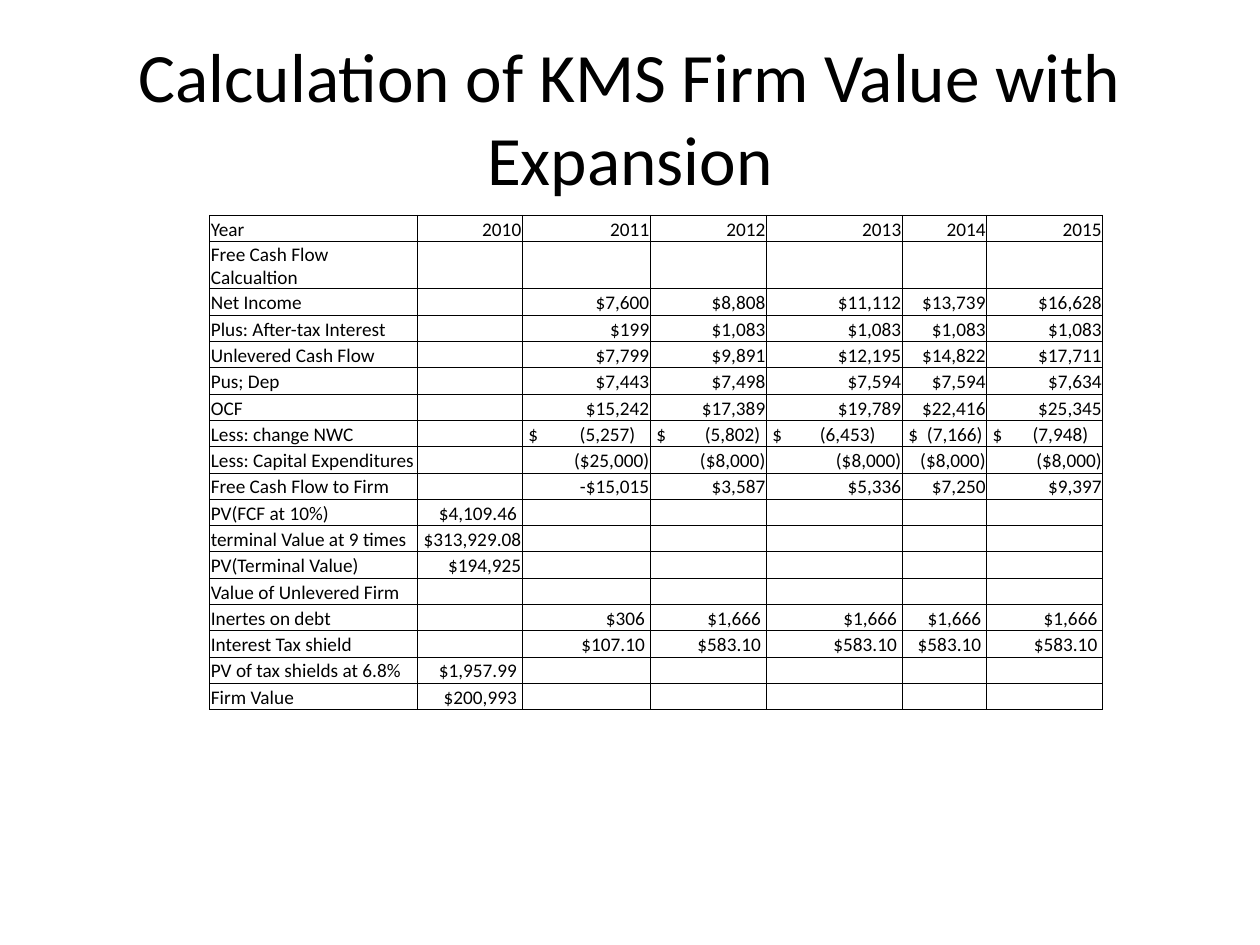
from lxml.etree import SubElement
from pptx import Presentation
from pptx.dml.color import RGBColor
from pptx.enum.text import MSO_ANCHOR, PP_ALIGN
from pptx.oxml.ns import qn
from pptx.util import Cm, Pt

COLORS = {"text": "000000", "border": "000000"}
FONT = "Calibri"
CELL_SIZE = 11
ROW_HEIGHT = 0.53
COLUMN_WIDTHS = [4.19, 2.11, 2.58, 2.34, 2.74, 1.7, 2.34]
AMOUNT_TABS = [2.16, 2.1, 2.08, 1.5, 1.93]

CASH_FLOWS = [
    ["Year", "2010", "2011", "2012", "2013", "2014", "2015"],
    ["Free Cash Flow Calcualtion"],
    ["Net Income", "", "$7,600", "$8,808", "$11,112", "$13,739", "$16,628"],
    ["Plus: After-tax Interest", "", "$199"] + ["$1,083"] * 4,
    ["Unlevered Cash Flow", "", "$7,799", "$9,891", "$12,195", "$14,822", "$17,711"],
    ["Pus; Dep", "", "$7,443", "$7,498", "$7,594", "$7,594", "$7,634"],
    ["OCF", "", "$15,242", "$17,389", "$19,789", "$22,416", "$25,345"],
    ["Less: change NWC", "", "$\t(5,257)", "$\t(5,802)", "$\t(6,453)", "$\t(7,166)", "$\t(7,948)"],
    ["Less: Capital Expenditures", "", "($25,000)"] + ["($8,000)"] * 4,
    ["Free Cash Flow to Firm", "", "-$15,015", "$3,587", "$5,336", "$7,250", "$9,397"],
    ["PV(FCF at 10%)", "$4,109.46 "],
    ["terminal Value at 9 times", "$313,929.08"],
    ["PV(Terminal Value)", "$194,925"],
    ["Value of Unlevered Firm"],
    ["Inertes on debt", "", "$306 "] + ["$1,666 "] * 4,
    ["Interest Tax shield", "", "$107.10 "] + ["$583.10 "] * 4,
    ["PV of tax shields at 6.8%", "$1,957.99 "],
    ["Firm Value", "$200,993 "],
]


def style_paragraph(paragraph, size, align):
    paragraph.alignment = align
    paragraph.font.size = Pt(size)
    paragraph.font.name = FONT
    paragraph.font.color.rgb = RGBColor.from_string(COLORS["text"])


def add_title(slide, left, top, width, height):
    title = slide.shapes.add_textbox(Cm(left), Cm(top), Cm(width), Cm(height)).text_frame
    title.word_wrap = True
    title.vertical_anchor = MSO_ANCHOR.MIDDLE
    title.text = "Calculation of KMS Firm Value with Expansion"
    style_paragraph(title.paragraphs[0], 39.6, PP_ALIGN.CENTER)


def add_borders(cell):
    properties = cell._tc.get_or_add_tcPr()
    for side in ("a:lnL", "a:lnR", "a:lnT", "a:lnB"):
        line = SubElement(properties, qn(side), w=str(Pt(0.5)))
        SubElement(SubElement(line, qn("a:solidFill")), qn("a:srgbClr"), val=COLORS["border"])


def add_right_tab(paragraph, position):
    tabs = SubElement(paragraph._p.get_or_add_pPr(), qn("a:tabLst"))
    SubElement(tabs, qn("a:tab"), pos=str(Cm(position)), algn="r")


def fill_cell(cell, entry, column):
    is_split_amount = "\t" in entry
    cell.vertical_anchor = MSO_ANCHOR.BOTTOM
    cell.margin_left = Cm(0.12 if is_split_amount else 0.02)
    cell.margin_right = cell.margin_top = Cm(0.02)
    cell.margin_bottom = 0
    add_borders(cell)
    cell.fill.background()
    cell.text = entry
    paragraph = cell.text_frame.paragraphs[0]
    if is_split_amount:
        add_right_tab(paragraph, AMOUNT_TABS[column - 2])
    is_left = column == 0 or is_split_amount
    style_paragraph(paragraph, CELL_SIZE, PP_ALIGN.LEFT if is_left else PP_ALIGN.RIGHT)
    if not entry:
        SubElement(paragraph._p, qn("a:endParaRPr"), sz=str(CELL_SIZE * 100))


def add_cash_flow_table(slide, left, top):
    table = slide.shapes.add_table(
        len(CASH_FLOWS), len(COLUMN_WIDTHS), Cm(left), Cm(top),
        Cm(sum(COLUMN_WIDTHS)), Cm(ROW_HEIGHT * len(CASH_FLOWS))).table
    table.first_row = table.horz_banding = False
    for column, width in zip(table.columns, COLUMN_WIDTHS):
        column.width = Cm(width)
    for row_index, entries in enumerate(CASH_FLOWS):
        table.rows[row_index].height = Cm(ROW_HEIGHT)
        padded = entries + [""] * (len(COLUMN_WIDTHS) - len(entries))
        for column_index, entry in enumerate(padded):
            fill_cell(table.cell(row_index, column_index), entry, column_index)


def main():
    presentation = Presentation()
    presentation.slide_width = Cm(25.4)
    presentation.slide_height = Cm(19.05)
    slide = presentation.slides.add_slide(presentation.slide_layouts[6])
    add_title(slide, 1.27, 0.76, 22.86, 3.18)
    add_cash_flow_table(slide, 4.23, 4.34)
    presentation.save("out.pptx")


if __name__ == "__main__":
    main()
